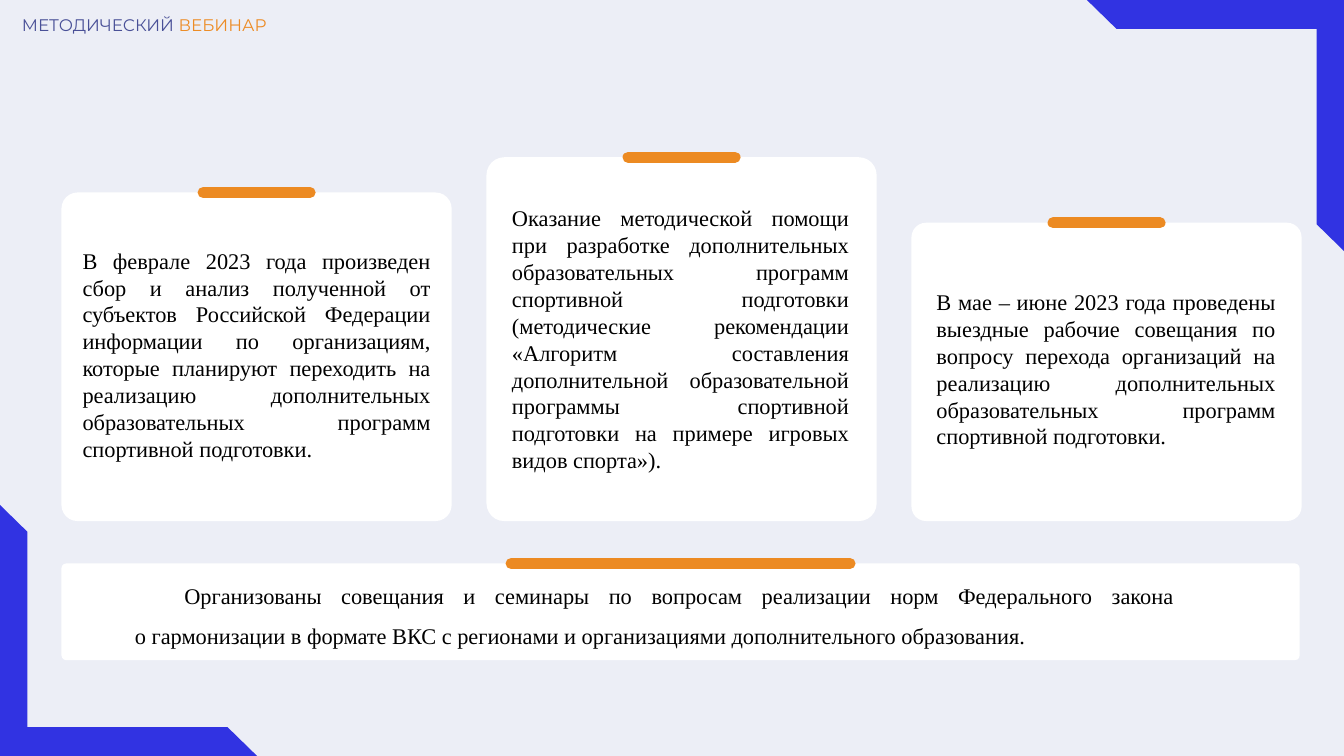
from lxml import etree
from pptx import Presentation
from pptx import util as u
from pptx.dml.color import RGBColor
from pptx.enum import shapes, text
from pptx.oxml.ns import qn

COLORS = {
    "background": "ECEEF6",
    "frame": "3133E2",
    "card": "FFFFFF",
    "accent": "EC8A22",
    "body": "000000",
    "header": "495097",
    "header_accent": "EC8C26",
}
BODY_FONT = "Times New Roman"
HEADER_FONT = "Montserrat"

CARD_LEFT, CARD_RIGHT, CARD_BOTTOM = 0.61, 12.91, 5.17
CARD_WIDTH = 3.87

# Card top, text box (left, top, width, height), wording
CARDS = [
    (1.91, (0.72, 2.4, 3.65, 2.26),
     "В феврале 2023 года произведен сбор и анализ полученной от субъектов "
     "Российской Федерации информации по организациям, которые планируют "
     "переходить на реализацию дополнительных образовательных программ "
     "спортивной подготовки."),
    (1.56, (4.98, 1.98, 3.54, 2.79),
     "Оказание методической помощи при разработке дополнительных "
     "образовательных программ спортивной подготовки (методические "
     "рекомендации «Алгоритм составления дополнительной образовательной "
     "программы спортивной подготовки на примере игровых видов спорта»)."),
    (2.21, (9.19, 2.81, 3.56, 1.72),
     "В мае – июне 2023 года проведены выездные рабочие совещания по вопросу "
     "перехода организаций на реализацию дополнительных образовательных "
     "программ спортивной подготовки."),
]
SUMMARY_LINES = [
    "Организованы совещания и семинары по вопросам реализации норм "
    "Федерального закона ",
    "о гармонизации в формате ВКС с регионами и организациями "
    "дополнительного образования.",
]


def color(name):
    return RGBColor.from_string(COLORS[name])


def inches(*lengths):
    return [u.Inches(length) for length in lengths]


def add_filled_shape(slide, kind, box, fill, adjustments):
    shape = slide.shapes.add_shape(kind, *inches(*box))
    shape.shadow.inherit = False
    shape.fill.solid()
    shape.fill.fore_color.rgb = color(fill)
    shape.line.fill.background()
    for index, value in enumerate(adjustments):
        shape.adjustments[index] = value
    return shape


def add_corner_frame(slide, left, top, rotation):
    shape = add_filled_shape(slide, shapes.MSO_SHAPE.HALF_FRAME,
                             (left, top, 2.49, 2.55), "frame", (0.109, 0.115))
    shape.rotation = rotation


def add_accent_line(slide, center, top, length):
    line = slide.shapes.add_connector(
        shapes.MSO_CONNECTOR.STRAIGHT,
        *inches(center - length / 2, top, center + length / 2, top))
    line.line.color.rgb = color("accent")
    line.line.width = u.Pt(8)
    line.line._get_or_add_ln().set("cap", "rnd")
    etree.SubElement(line._element.spPr, qn("a:effectLst"))


def add_card(slide, left, top, width, height, accent_length):
    add_filled_shape(slide, shapes.MSO_SHAPE.ROUNDED_RECTANGLE,
                     (left, top, width, height), "card", (0.049,))
    add_accent_line(slide, left + width / 2, top, accent_length)


def add_text_box(slide, box):
    """Add a wrapping text box and return its first paragraph."""
    frame = slide.shapes.add_textbox(*inches(*box)).text_frame
    frame.word_wrap = True
    frame.auto_size = text.MSO_AUTO_SIZE.SHAPE_TO_FIT_TEXT
    return frame.paragraphs[0]


def add_run(paragraph, words, size, font, color_name):
    run = paragraph.add_run()
    run.text = words
    run.font.size = u.Pt(size)
    run.font.name = font
    run.font.color.rgb = color(color_name)


def add_body_text(slide, box, lines):
    paragraph = add_text_box(slide, box)
    paragraph.alignment = text.PP_ALIGN.JUSTIFY
    for index, line in enumerate(lines):
        if index:
            paragraph.add_line_break()
        add_run(paragraph, line, 16, BODY_FONT, "body")
    return paragraph


def main():
    presentation = Presentation()
    presentation.slide_width, presentation.slide_height = inches(13.33, 7.5)
    slide = presentation.slides.add_slide(presentation.slide_layouts[6])
    slide.background.fill.solid()
    slide.background.fill.fore_color.rgb = color("background")

    # Header and corner frames
    header = add_text_box(slide, (0.12, 0.1, 2.63, 0.5))
    add_run(header, "МЕТОДИЧЕСКИЙ ", 12, HEADER_FONT, "header")
    add_run(header, "ВЕБИНАР", 12, HEADER_FONT, "header_accent")
    add_corner_frame(slide, 10.81, -0.03, 90)
    add_corner_frame(slide, 0.03, 4.98, 270)

    # Three cards with a common bottom edge
    pitch = (CARD_RIGHT - CARD_WIDTH - CARD_LEFT) / (len(CARDS) - 1)
    for index, (top, text_box, words) in enumerate(CARDS):
        add_card(slide, CARD_LEFT + index * pitch, top, CARD_WIDTH,
                 CARD_BOTTOM - top, 1.06)
        add_body_text(slide, text_box, [words])

    # Wide summary card
    add_card(slide, CARD_LEFT, 5.59, 12.28, 0.96, 3.36)
    summary = add_body_text(slide, (1.24, 5.59, 10.7, 0.87), SUMMARY_LINES)
    summary.line_spacing = 1.5
    summary._p.get_or_add_pPr().set("indent", str(u.Inches(0.49)))

    presentation.save("out.pptx")


if __name__ == "__main__":
    main()
